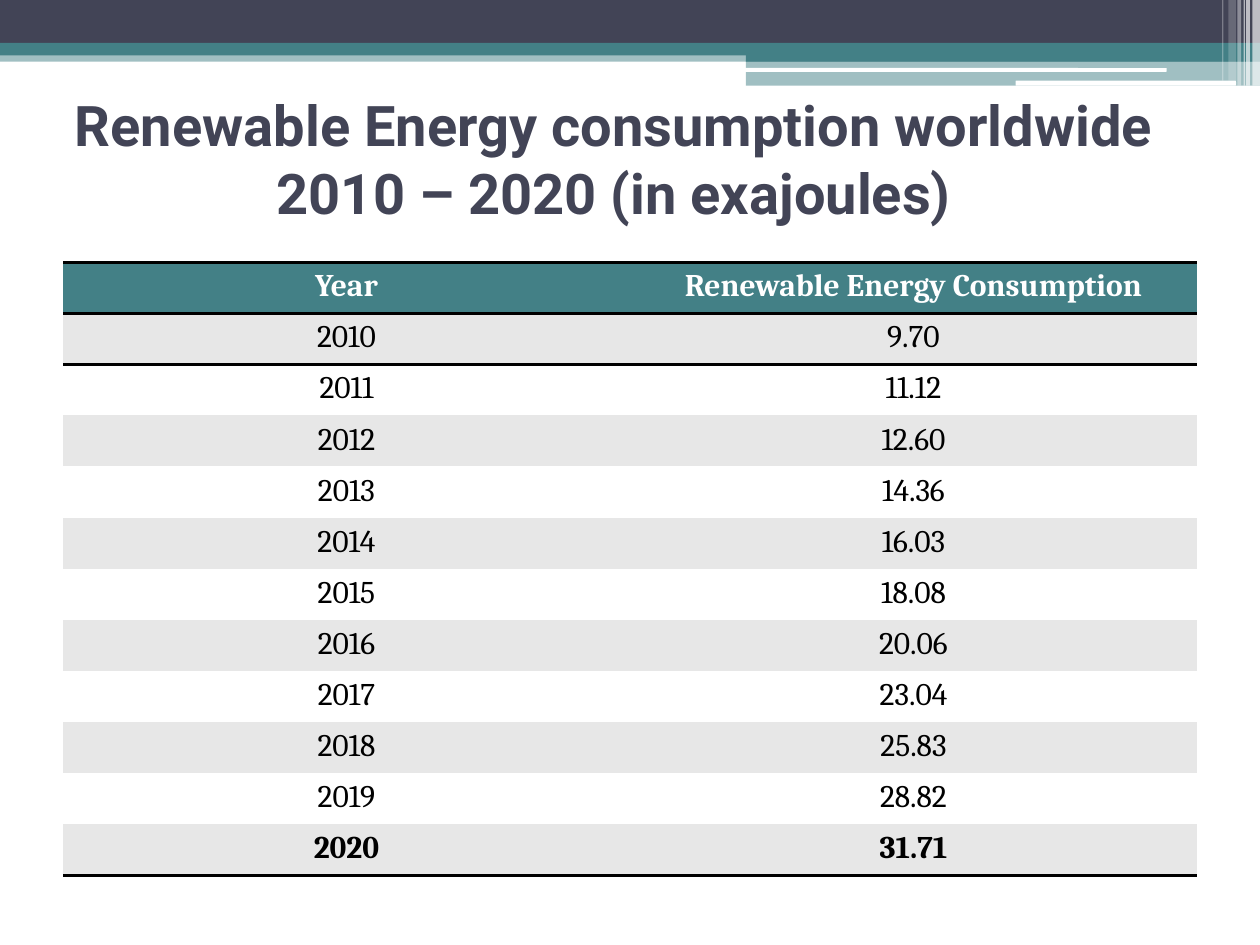
from pptx import Presentation
from pptx import util as u
from pptx.dml.color import RGBColor
from pptx.enum import shapes, text
from pptx.oxml import ns
from lxml import etree

Inches = u.Inches
NAVY = RGBColor(0x42, 0x44, 0x56)
TEAL = RGBColor(0x43, 0x80, 0x86)
WHITE = RGBColor(0xFF, 0xFF, 0xFF)
BLACK = RGBColor(0, 0, 0)
GREY = RGBColor(0xE7, 0xE7, 0xE7)
NO_GRID_STYLE = "{2D5ABB26-0587-4C30-8999-92F81FD0307C}"

HEADER = ("Year", "Renewable Energy Consumption")
CONSUMPTION = ("9.70", "11.12", "12.60", "14.36", "16.03", "18.08",
               "20.06", "23.04", "25.83", "28.82", "31.71")
FIRST_YEAR = 2010

# left, top, width, height, colour, opacity in percent
BANDS = (
    (0, 0.4, 10, 0.09, TEAL, 50),
    (0, 0, 10, 0.34, NAVY, 100),
    (0, 0.34, 10, 0.1, TEAL, 100),
    (5.92, 0.39, 4.08, 0.1, TEAL, 100),
    (5.92, 0.48, 4.08, 0.2, TEAL, 50),
)
WHITE_BARS = ((5.91, 0.54, 3.35, 0.03), (8.06, 0.64, 1.75, 0.04))
# left, width, height, opacity in percent
STRIPES = ((9.94, 0.06, 0.68, 65), (9.89, 0.03, 0.68, 65),
           (9.87, 0.01, 0.68, 60), (9.82, 0.03, 0.68, 40),
           (9.75, 0.06, 0.64, 20), (9.7, 0.01, 0.64, 30))


def add_block(page, left, top, width, height, color, opacity=100,
              kind=shapes.MSO_SHAPE.RECTANGLE):
    block = page.shapes.add_shape(kind, Inches(left), Inches(top),
                                  Inches(width), Inches(height))
    block.shadow.inherit = False
    block.fill.solid()
    block.fill.fore_color.rgb = color
    block.line.fill.background()
    if opacity < 100:
        tint = block.fill._xPr.find(ns.qn("a:solidFill"))[0]
        etree.SubElement(tint, ns.qn("a:alpha"), val=str(opacity * 1000))


def add_banner(page, left, top):
    for x, y, width, height, color, opacity in BANDS:
        add_block(page, left + x, top + y, width, height, color, opacity)
    for x, y, width, height in WHITE_BARS:
        add_block(page, left + x, top + y, width, height, WHITE,
                  kind=shapes.MSO_SHAPE.ROUNDED_RECTANGLE)
    for x, width, height, opacity in STRIPES:
        add_block(page, left + x, top, width, height, WHITE, opacity)


def style_paragraph(para, font_name, size, color, bold):
    para.alignment = text.PP_ALIGN.CENTER
    para.font.name = font_name
    para.font.size = u.Pt(size)
    para.font.bold = bold
    para.font.color.rgb = color


def add_title(page, left, top, width, height):
    box = page.shapes.add_textbox(Inches(left), Inches(top),
                                  Inches(width), Inches(height))
    frame = box.text_frame
    frame.word_wrap = True
    frame.vertical_anchor = text.MSO_ANCHOR.MIDDLE
    para = frame.paragraphs[0]
    para.text = "Renewable Energy consumption worldwide 2010 – 2020 (in exajoules)"
    style_paragraph(para, "Roboto", 32, NAVY, True)


def add_borders(cell, sides):
    """Draw black 2 pt rules; sides are "T" and "B", in that order."""
    properties = cell._tc.get_or_add_tcPr()
    for position, side in enumerate(sides):
        line = etree.Element(ns.qn(f"a:ln{side}"), w=str(u.Pt(2)))
        fill = etree.SubElement(line, ns.qn("a:solidFill"))
        etree.SubElement(fill, ns.qn("a:srgbClr"), val=str(BLACK))
        properties.insert(position, line)


def add_consumption_table(page, left, top, width, height):
    years = [str(FIRST_YEAR + i) for i in range(len(CONSUMPTION))]
    rows = [HEADER, *zip(years, CONSUMPTION)]
    last = len(rows) - 1
    table = page.shapes.add_table(len(rows), len(HEADER), Inches(left), Inches(top),
                                  Inches(width), Inches(height)).table
    table._tbl.tblPr.find(ns.qn("a:tableStyleId")).text = NO_GRID_STYLE
    for r, values in enumerate(rows):
        for c, value in enumerate(values):
            cell = table.cell(r, c)
            cell.fill.solid()
            cell.fill.fore_color.rgb = TEAL if r == 0 else GREY if r % 2 else WHITE
            para = cell.text_frame.paragraphs[0]
            para.text = value
            style_paragraph(para, "Cambria", 18, WHITE if r == 0 else BLACK,
                            r in (0, last))
            add_borders(cell, {0: "TB", 1: "T", last: "B"}.get(r, ""))


def main():
    deck = Presentation()
    deck.slide_width, deck.slide_height = Inches(10), Inches(7.5)
    page = deck.slides.add_slide(deck.slide_layouts[6])
    add_banner(page, 0, 0)
    add_title(page, 0.25, 0.67, 9.25, 1.17)
    add_consumption_table(page, 0.5, 2.08, 9, 4.87)
    deck.save("out.pptx")


if __name__ == "__main__":
    main()
